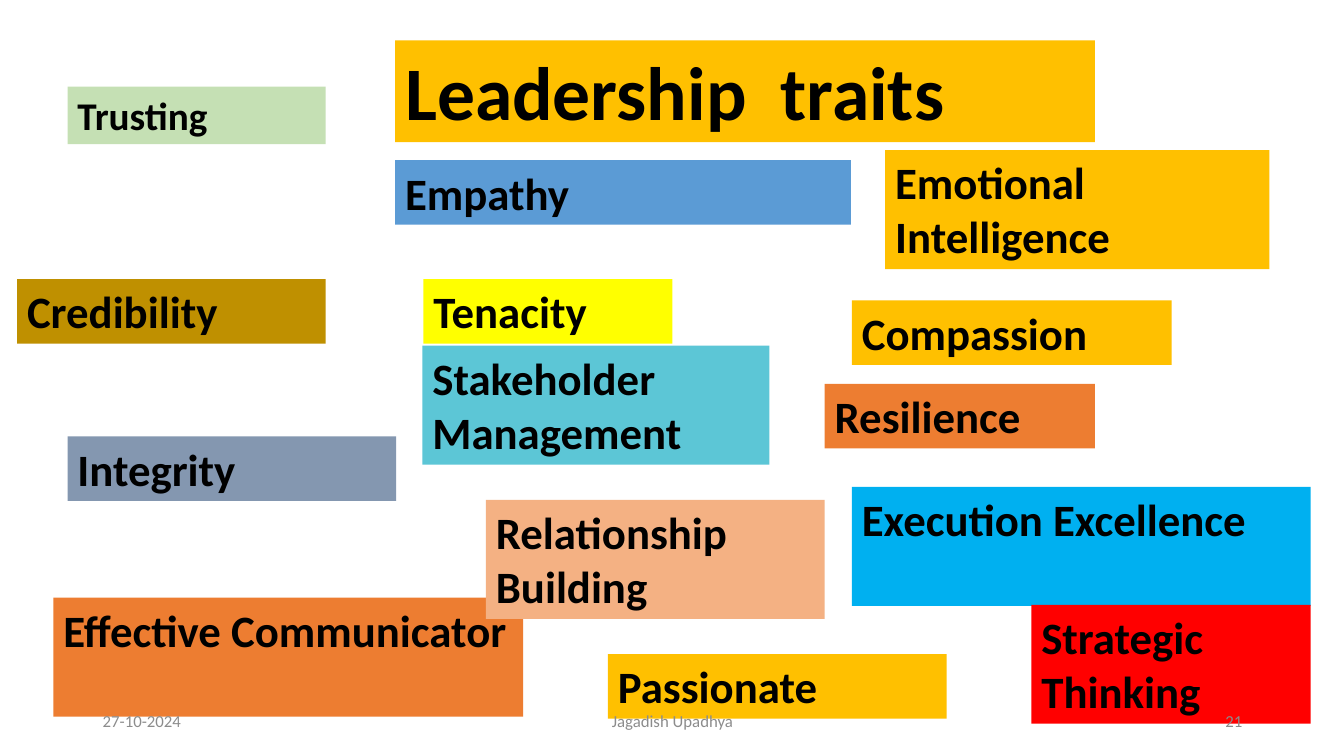
from pptx import Presentation
from pptx.dml.color import RGBColor
from pptx.enum.text import MSO_ANCHOR, PP_ALIGN
from pptx.util import Emu, Pt

PX = 9144
FONT = "Calibri"
TOP, MIDDLE = MSO_ANCHOR.TOP, MSO_ANCHOR.MIDDLE
LEFT, CENTER, RIGHT = PP_ALIGN.LEFT, PP_ALIGN.CENTER, PP_ALIGN.RIGHT

BLACK = RGBColor(0x00, 0x00, 0x00)
GRAY = RGBColor(0x8C, 0x8C, 0x8C)
PALE_GREEN = RGBColor(0xC5, 0xE0, 0xB4)
BLUE = RGBColor(0x5B, 0x9B, 0xD5)
GOLD = RGBColor(0xFF, 0xC0, 0x00)
DARK_GOLD = RGBColor(0xBF, 0x90, 0x00)
SLATE = RGBColor(0x84, 0x97, 0xB0)
ORANGE = RGBColor(0xED, 0x7D, 0x31)
SKY = RGBColor(0x00, 0xB0, 0xF0)
YELLOW = RGBColor(0xFF, 0xFF, 0x00)
RED = RGBColor(0xFF, 0x00, 0x00)
PEACH = RGBColor(0xF4, 0xB1, 0x83)
TEAL = RGBColor(0x5C, 0xC6, 0xD6)

ONE_LINE, TWO_LINES = 64, 118
TRAITS = [
    ("Empathy", 392, 159, 452, ONE_LINE, BLUE),
    ("Compassion", 845, 298, 317, ONE_LINE, GOLD),
    ("Credibility", 17, 277, 306, ONE_LINE, DARK_GOLD),
    ("Integrity", 67, 433, 326, ONE_LINE, SLATE),
    ("Resilience", 818, 381, 268, ONE_LINE, ORANGE),
    ("Execution Excellence", 845, 483, 455, TWO_LINES, SKY),
    ("Tenacity", 420, 277, 247, ONE_LINE, YELLOW),
    ("Effective Communicator", 53, 593, 466, TWO_LINES, ORANGE),
    ("Passionate", 603, 649, 336, ONE_LINE, GOLD),
    ("Strategic Thinking", 1023, 600, 277, TWO_LINES, RED),
    ("Relationship Building", 482, 496, 336, TWO_LINES, PEACH),
    ("Stakeholder  Management", 419, 343, 344, TWO_LINES, TEAL),
    ("Emotional Intelligence", 878, 149, 381, TWO_LINES, GOLD),
]


def add_text(slide, text, box, *, size=32, color=BLACK, bold=True, fill=None,
             align=LEFT, anchor=TOP):
    """Add a wrapped text box, with a solid fill if one is given."""
    shape = slide.shapes.add_textbox(*(Emu(length * PX) for length in box))
    if fill is not None:
        shape.fill.solid()
        shape.fill.fore_color.rgb = fill
    frame = shape.text_frame
    frame.word_wrap = True
    frame.vertical_anchor = anchor
    paragraph = frame.paragraphs[0]
    paragraph.alignment = align
    run = paragraph.add_run()
    run.text = text
    run.font.name = FONT
    run.font.size = Pt(size)
    run.font.bold = bold
    run.font.color.rgb = color


def add_traits(slide, box):
    """Scatter the trait labels over the given box."""
    left, top, _, _ = box
    add_text(slide, "Trusting", (left + 67, top + 86, 256, 57), size=28, fill=PALE_GREEN)
    for text, x, y, width, height, fill in TRAITS:
        add_text(slide, text, (left + x, top + y, width, height), fill=fill)


def add_footer(slide, box):
    """Place date, author and slide number at the left, centre and right of the box."""
    left, top, width, height = box
    side, middle = 300, 450
    for text, x, part_width, align in (
        ("27-10-2024", left, side, LEFT),
        ("Jagadish Upadhya", left + (width - middle) // 2, middle, CENTER),
        ("21", left + width - side, side, RIGHT),
    ):
        add_text(slide, text, (x, top, part_width, height), size=12, color=GRAY,
                 bold=False, align=align, anchor=MIDDLE)


def main():
    """Build the leadership traits slide and save it."""
    presentation = Presentation()
    presentation.slide_width = Emu(1333 * PX)
    presentation.slide_height = Emu(750 * PX)
    slide = presentation.slides.add_slide(presentation.slide_layouts[6])
    add_traits(slide, (0, 0, 1333, 750))
    add_text(slide, "Leadership  traits", (392, 40, 694, 101), size=54, fill=GOLD)
    add_footer(slide, (92, 695, 1150, 40))
    presentation.save("out.pptx")


if __name__ == "__main__":
    main()
